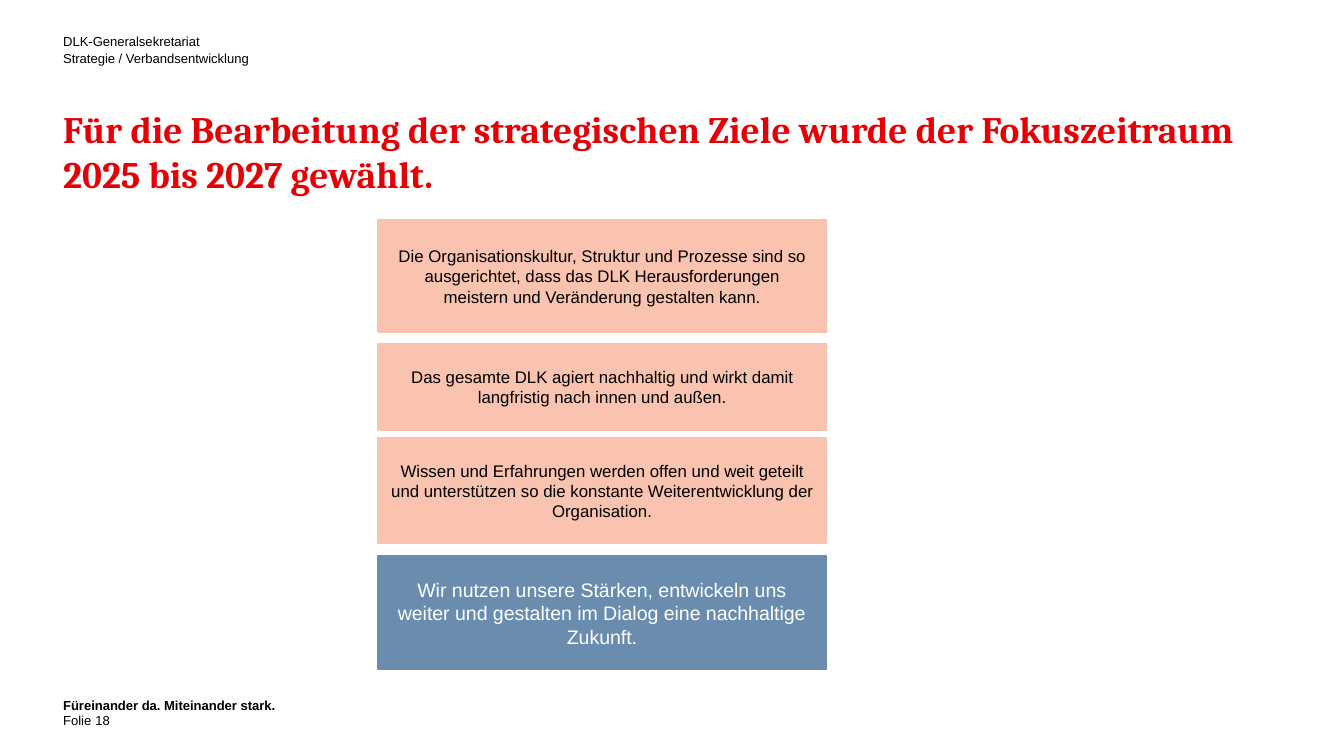
from pptx import Presentation
from pptx.dml.color import RGBColor
from pptx.enum.shapes import MSO_SHAPE
from pptx.enum.text import MSO_ANCHOR, MSO_AUTO_SIZE, PP_ALIGN
from pptx.util import Inches, Pt

RED = RGBColor(0xE6, 0x00, 0x05)
SALMON = RGBColor(0xFA, 0xC3, 0xAF)
BLUE = RGBColor(0x69, 0x8C, 0xAF)
BLACK = RGBColor(0x00, 0x00, 0x00)
WHITE = RGBColor(0xFF, 0xFF, 0xFF)
RECTANGLE = MSO_SHAPE.RECTANGLE
TOP, MIDDLE, BOTTOM = MSO_ANCHOR.TOP, MSO_ANCHOR.MIDDLE, MSO_ANCHOR.BOTTOM
LEFT, CENTER = PP_ALIGN.LEFT, PP_ALIGN.CENTER
NO_AUTOFIT = MSO_AUTO_SIZE.NONE

MARGIN = 0.47


def write(frame, text, size=7, font="Arial", color=BLACK, bold=False,
          align=LEFT, anchor=TOP, spacing=None, inset=0):
    frame.word_wrap = True
    frame.auto_size = NO_AUTOFIT
    frame.vertical_anchor = anchor
    frame.margin_left = frame.margin_right = Inches(inset)
    frame.margin_top = frame.margin_bottom = Inches(inset / 2)
    frame.text = text
    for paragraph in frame.paragraphs:
        paragraph.alignment = align
        if spacing:
            paragraph.line_spacing = Pt(spacing)
        paragraph.font.size = Pt(size)
        paragraph.font.name = font
        paragraph.font.bold = bold
        paragraph.font.color.rgb = color


# Widescreen slide, 16:9
prs = Presentation()
prs.slide_width = Inches(10)
prs.slide_height = Inches(10 * 9 / 16)
slide = prs.slides.add_slide(prs.slide_layouts[5])

# Title
title = slide.shapes.title
title.left, title.top = Inches(MARGIN), Inches(0.79)
title.width, title.height = Inches(9.06), Inches(0.64)
write(title.text_frame,
      "Für die Bearbeitung der strategischen Ziele wurde der Fokuszeitraum "
      "2025 bis 2027 gewählt.",
      size=20, font="Cambria", color=RED, bold=True, spacing=24)

# Header and footer: left, top, width, height, text, bold, anchor
small_print = [
    (MARGIN, 0.24, 1.79, 0.25,
     "DLK-Generalsekretariat\nStrategie / Verbandsentwicklung", False, TOP),
    (MARGIN, 5.18, 9.06, 0.09, "Füreinander da. Miteinander stark.", True, TOP),
    (MARGIN, 5.29, 0.3, 0.13, "Folie", False, BOTTOM),
    (0.71, 5.3, 2.25, 0.12, "18", False, BOTTOM),
]
for left, top, width, height, text, bold, anchor in small_print:
    note = slide.shapes.add_textbox(Inches(left), Inches(top),
                                    Inches(width), Inches(height))
    write(note.text_frame, text, bold=bold, anchor=anchor, spacing=9)

# Strategic goals, with the guiding statement below: top, height, colours, size
goals = [
    (1.64, 0.83, SALMON, BLACK, 9,
     "Die Organisationskultur, Struktur und Prozesse sind so ausgerichtet, "
     "dass das DLK Herausforderungen meistern und Veränderung gestalten kann."),
    (2.56, 0.64, SALMON, BLACK, 9,
     "Das gesamte DLK agiert nachhaltig und wirkt damit langfristig nach "
     "innen und außen."),
    (3.26, 0.78, SALMON, BLACK, 9,
     "Wissen und Erfahrungen werden offen und weit geteilt und unterstützen "
     "so die konstante Weiterentwicklung der Organisation."),
    (4.14, 0.84, BLUE, WHITE, 10.5,
     "Wir nutzen unsere Stärken, entwickeln uns weiter und gestalten im "
     "Dialog eine nachhaltige Zukunft."),
]
for top, height, fill, color, size, text in goals:
    goal = slide.shapes.add_shape(RECTANGLE, Inches(2.81), Inches(top),
                                  Inches(3.34), Inches(height))
    goal.shadow.inherit = False
    goal.fill.solid()
    goal.fill.fore_color.rgb = fill
    goal.line.color.rgb = fill
    goal.line.width = Pt(1)
    write(goal.text_frame, text, size=size, color=color, align=CENTER,
          anchor=MIDDLE, inset=0.1)

prs.save("out.pptx")
